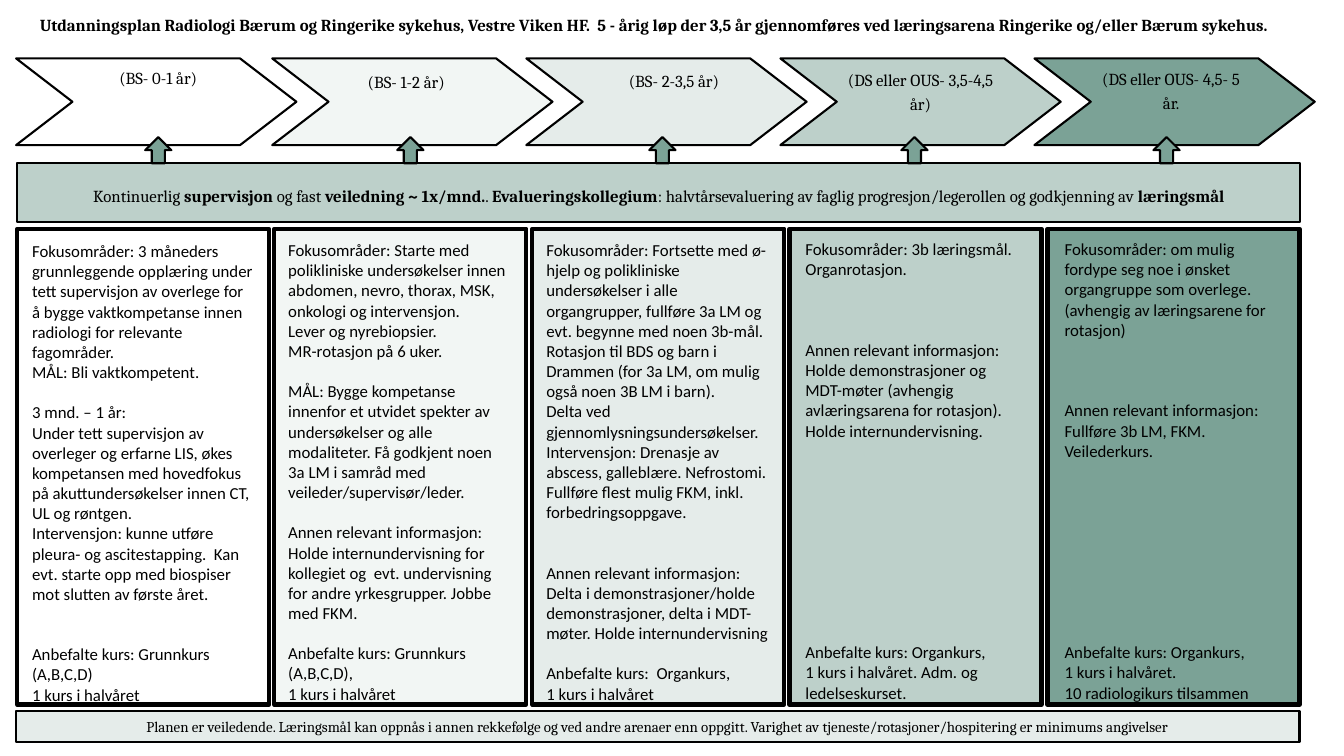
from dataclasses import dataclass

from pptx import Presentation
from pptx import util as u
from pptx.dml.color import RGBColor
from pptx.enum import shapes, text

PX = 9144  # EMU per px, 100 px to the inch


@dataclass(frozen=True)
class Theme:
    ink: str = "000000"
    stages: tuple = ("FFFFFF", "F2F6F4", "E5ECEA", "BDD0CA", "7BA296")
    heading: str = "Cambria"
    body: str = "Calibri"
    size: float = 12
    small: float = 10.7
    thin: float = 1.5
    thick: float = 3
    body_line: float = 14.4


THEME = Theme()
CENTER = text.PP_ALIGN.CENTER

TITLE = ("Utdanningsplan Radiologi Bærum og Ringerike sykehus, Vestre Viken HF.  5 - årig løp "
         "der 3,5 år gjennomføres ved læringsarena Ringerike og/eller Bærum sykehus.")
FOOTER = ("Planen er veiledende. Læringsmål kan oppnås i annen rekkefølge og ved andre arenaer "
          "enn oppgitt. Varighet av tjeneste/rotasjoner/hospitering er minimums angivelser")
# Spans alternate between regular and bold
SUPERVISION = ["Kontinuerlig ", "supervisjon ", "og fast ", "veiledning ~ 1x/mnd.", ". ",
               "Evalueringskollegium",
               ": halvtårsevaluering av faglig progresjon/legerollen og godkjenning av ",
               "læringsmål"]

# Each stage: chevron left, label and its frame, text frame, (lines of space above, paragraph)
STAGES = [
    (16, "(BS- 0-1 år)", (79, 64, 156, 24), (22, 234, 240, 475), [
        (0, "Fokusområder: 3 måneders grunnleggende opplæring under tett supervisjon av overlege "
            "for å bygge vaktkompetanse innen radiologi for relevante fagområder."),
        (0, "MÅL: Bli vaktkompetent."),
        (1, "3 mnd. – 1 år:"),
        (0, "Under tett supervisjon av overleger og erfarne LIS, økes kompetansen med hovedfokus "
            "på akuttundersøkelser innen CT, UL og røntgen."),
        (0, "Intervensjon: kunne utføre pleura- og ascitestapping.  Kan evt. starte opp med "
            "biospiser mot slutten av første året."),
        (2, "Anbefalte kurs: Grunnkurs (A,B,C,D)"),
        (0, "1 kurs i halvåret")]),
    (270, "(BS- 1-2 år)", (325, 68, 156, 24), (276, 233, 241, 495), [
        (0, "Fokusområder: Starte med polikliniske undersøkelser innen abdomen, nevro, thorax, "
            "MSK, onkologi og intervensjon."),
        (0, "Lever og nyrebiopsier."),
        (0, "MR-rotasjon på 6 uker."),
        (1, "MÅL: Bygge kompetanse innenfor et utvidet spekter av undersøkelser og alle "
            "modaliteter. Få godkjent noen 3a LM i samråd med veileder/supervisør/leder."),
        (1, "Annen relevant informasjon: Holde internundervisning for kollegiet og  evt. "
            "undervisning for andre yrkesgrupper. Jobbe med FKM."),
        (1, "Anbefalte kurs: Grunnkurs (A,B,C,D),"),
        (0, "1 kurs i halvåret")]),
    (522, "(BS- 2-3,5 år)", (587, 67, 163, 24), (532, 233, 241, 475), [
        (0, "Fokusområder: Fortsette med ø-hjelp og polikliniske undersøkelser i alle "
            "organgrupper, fullføre 3a LM og evt. begynne med noen 3b-mål."),
        (0, "Rotasjon til BDS og barn i Drammen (for 3a LM, om mulig også noen 3B LM i barn)."),
        (0, "Delta ved gjennomlysningsundersøkelser."),
        (0, "Intervensjon: Drenasje av abscess, galleblære. Nefrostomi. Fullføre flest mulig "
            "FKM, inkl. forbedringsoppgave."),
        (2, "Annen relevant informasjon: Delta i demonstrasjoner/holde demonstrasjoner, delta i "
            "MDT-møter. Holde internundervisning"),
        (1, "Anbefalte kurs:  Organkurs,"),
        (0, "1 kurs i halvåret")]),
    (774, "(DS eller OUS- 3,5-4,5 år)", (839, 66, 148, 48), (789, 232, 237, 495), [
        (0, "Fokusområder: 3b læringsmål. Organrotasjon."),
        (3, "Annen relevant informasjon: Holde demonstrasjoner og MDT-møter (avhengig "
            "avlæringsarena for rotasjon). Holde internundervisning."),
        (10, "Anbefalte kurs: Organkurs,"),
        (0, "1 kurs i halvåret. Adm. og ledelseskurset.")]),
    (1026, "(DS eller OUS- 4,5- 5 år.", (1086, 65, 151, 48), (1046, 232, 241, 495), [
        (0, "Fokusområder: om mulig fordype seg noe i ønsket organgruppe som overlege."),
        (0, "(avhengig av læringsarene for rotasjon)"),
        (3, "Annen relevant informasjon: Fullføre 3b LM, FKM. Veilederkurs."),
        (9, "Anbefalte kurs: Organkurs,"),
        (0, "1 kurs i halvåret."),
        (0, "10 radiologikurs tilsammen")]),
]


def apply(target, values):
    for name, value in values.items():
        setattr(target, name, value)


def emu(frame):
    return [length * PX for length in frame]


def add_panel(slide, kind, frame, fill, weight=THEME.thin, adjust=()):
    """Filled and outlined preset shape."""
    panel = slide.shapes.add_shape(kind, *emu(frame))
    panel.shadow.inherit = False
    panel.fill.solid()
    panel.fill.fore_color.rgb = RGBColor.from_string(fill)
    panel.line.color.rgb = RGBColor.from_string(THEME.ink)
    panel.line.width = u.Pt(weight)
    for index, value in enumerate(adjust):
        panel.adjustments[index] = value
    return panel


def prepare(box, inset=True, anchor=text.MSO_ANCHOR.TOP):
    """Wrapping text frame, with or without the usual insets."""
    body = box.text_frame
    apply(body, {"word_wrap": True, "auto_size": text.MSO_AUTO_SIZE.NONE,
                 "vertical_anchor": anchor})
    if not inset:
        apply(body, dict.fromkeys(
            ("margin_left", "margin_top", "margin_right", "margin_bottom"), 0))
    return body


def write(para, spans, font, size=THEME.size, **layout):
    """Fill a paragraph with (words, bold) spans."""
    apply(para, layout)
    for words, bold in spans:
        span = para.add_run()
        span.text = words
        apply(span.font, {"name": font, "size": u.Pt(size), "bold": bold})
        span.font.color.rgb = RGBColor.from_string(THEME.ink)


def add_line(slide, frame, spans, spacing):
    """Centred heading text with exact line spacing."""
    body = prepare(slide.shapes.add_textbox(*emu(frame)), inset=False)
    write(body.paragraphs[0], spans, THEME.heading,
          alignment=CENTER, line_spacing=u.Pt(spacing))


def add_column_text(slide, frame, entries):
    body = prepare(slide.shapes.add_textbox(*emu(frame)))
    for index, (gap, words) in enumerate(entries):
        para = body.add_paragraph() if index else body.paragraphs[0]
        layout = {"space_before": u.Pt(gap * THEME.body_line)} if gap else {}
        write(para, [(words, False)], THEME.body, **layout)


def add_title(slide):
    title = slide.shapes.title
    apply(title, dict(zip(("left", "top", "width", "height"), emu((22, 14, 1254, 20)))))
    body = prepare(title, inset=False)
    write(body.paragraphs[0], [(TITLE, True)], THEME.heading,
          alignment=CENTER, line_spacing=u.Pt(14.9))


def main():
    deck = Presentation()
    apply(deck, {"slide_width": 1333 * PX, "slide_height": 750 * PX})
    slide = deck.slides.add_slide(deck.slide_layouts[5])
    preset = shapes.MSO_SHAPE
    add_title(slide)

    # Supervision band
    add_panel(slide, preset.RECTANGLE, (17, 162, 1272, 58), THEME.stages[3])
    spans = [(words, index % 2 == 1) for index, words in enumerate(SUPERVISION)]
    add_line(slide, (20, 176, 1267, 26), spans, 20.5)

    # Stages: chevron, arrow up from the band, column
    for index, (left, label, label_frame, text_frame, entries) in enumerate(STAGES):
        fill = THEME.stages[index]
        add_panel(slide, preset.CHEVRON, (left, 58, 278, 86), fill, adjust=[0.65])
        add_line(slide, label_frame, [(label, False)], 16.8)
        add_panel(slide, preset.UP_ARROW, (144 + 250 * index, 136, 26, 26), THEME.stages[4])
        column = (17 + 511 * index // 2, 227, 250, 472)
        add_panel(slide, preset.RECTANGLE, column, fill, THEME.thick)
        add_column_text(slide, text_frame, entries)

    # Footer
    footer = add_panel(slide, preset.RECTANGLE, (16, 705, 1273, 31), THEME.stages[2])
    body = prepare(footer, anchor=text.MSO_ANCHOR.MIDDLE)
    write(body.paragraphs[0], [(FOOTER, False)], THEME.heading, THEME.small, alignment=CENTER)

    deck.save("out.pptx")


if __name__ == "__main__":
    main()
